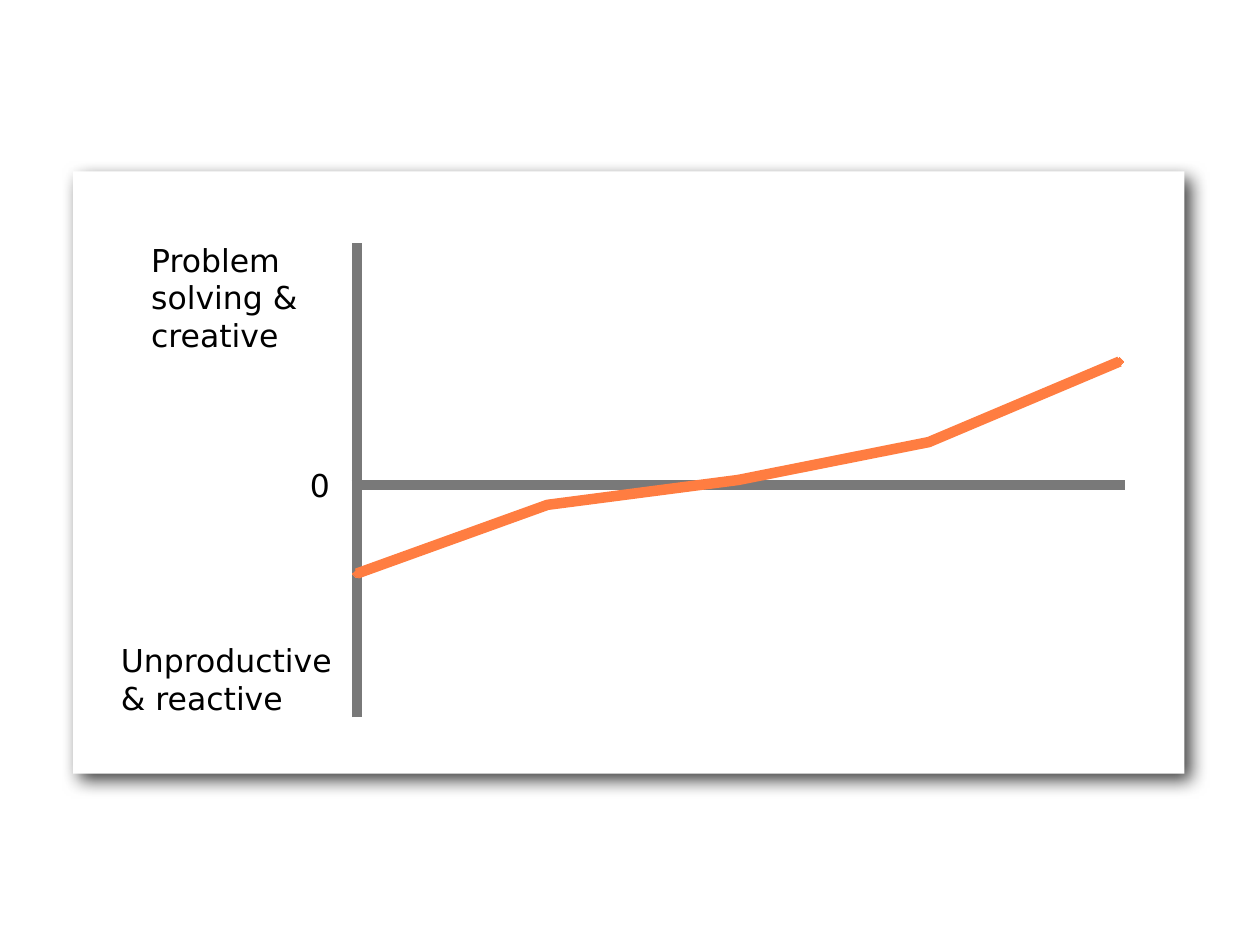
"""Build a slide charting the move from reactive to creative work."""
import lxml.etree
import pptx
import pptx.chart.data
import pptx.dml.color
import pptx.enum.chart
import pptx.enum.shapes
import pptx.enum.text
import pptx.oxml.ns
import pptx.util

Inches, Pt = pptx.util.Inches, pptx.util.Pt
qn = pptx.oxml.ns.qn

LABELS = [
    (["0"], (2.36, 3.64, 0.33, 0.42), False),
    (["Problem solving & creative"], (1.1, 1.85, 1.43, 1.03), True),
    (["Unproductive", "& reactive"], (0.86, 5.03, 2.01, 0.72), False),
]
CATS = ["1", "2", "3", "4", "5"]
VALUES = [-79, -21, 0, 32, 100]
PANEL = (0.58, 1.36, 8.82, 4.78)
GRAPH = (2.53, 1.54, 6.42, 4.37)
PLOT = {"x": 0.047, "y": 0.089, "w": 0.943, "h": 0.861}
ZERO = (2.79, 3.85, 8.93, 3.85)
THEME = {
    "font": "DejaVu Sans", "tick": "Calibri", "text": "000000", "panel": "FFFFFF",
    "axis": "797979", "curve": "FF7D41", "mark": "FFAA79",
    "label": 18, "chart": 10, "ticks": 24, "line": 6,
}


def place(box):
    """Turn a tuple of inches into lengths."""
    return [Inches(v) for v in box]


def tint(name):
    """Return a theme colour."""
    return pptx.dml.color.RGBColor.from_string(THEME[name])


def add(parent, tag, **attrs):
    """Append an XML child with attributes."""
    node = lxml.etree.SubElement(parent, qn(tag))
    for key, val in attrs.items():
        node.set(key, str(val))
    return node


def style(font, face="font", size="label"):
    """Give a font its face, size and colour."""
    font.name, font.size = THEME[face], Pt(THEME[size])
    font.color.rgb = tint("text")


def stroke(line, name):
    """Give a line its colour and width."""
    line.color.rgb = tint(name)
    line.width = Pt(THEME["line"])


def write(slide, lines, box, wrap=False, pad=0.06, indent=0.04):
    """Add a text box with one paragraph per line."""
    frame = slide.shapes.add_textbox(*place(box)).text_frame
    frame.word_wrap = wrap
    frame.auto_size = pptx.enum.text.MSO_AUTO_SIZE.SHAPE_TO_FIT_TEXT
    frame.margin_left = frame.margin_right = Inches(pad)
    frame.margin_top = frame.margin_bottom = Inches(pad)
    for i, line in enumerate(lines):
        para = frame.add_paragraph() if i else frame.paragraphs[0]
        props = para._p.get_or_add_pPr()
        props.set("marL", str(Inches(indent)))
        props.set("indent", "0")
        run = para.add_run()
        run.text = line
        style(run.font)


def draw_panel(slide):
    """Draw the white card with its soft shadow."""
    card = slide.shapes.add_shape(pptx.enum.shapes.MSO_SHAPE.RECTANGLE, *place(PANEL))
    card.fill.solid()
    card.fill.fore_color.rgb = tint("panel")
    card.line.fill.background()
    card.shadow.inherit = False
    cast = add(card._element.spPr.find(qn("a:effectLst")), "a:outerShdw",
               blurRad=Pt(10), dist=Pt(6), dir=45 * 60000, algn="tl", rotWithShape=0)
    add(add(cast, "a:srgbClr", val=THEME["text"]), "a:alpha", val=75000)


def draw_zero(slide):
    """Draw the horizontal zero line."""
    line = slide.shapes.add_connector(pptx.enum.shapes.MSO_CONNECTOR.STRAIGHT, *place(ZERO))
    stroke(line.line, "axis")
    add(line._element.spPr, "a:effectLst")


def set_plot(chart):
    """Fix the inner plot area and start the curve on the axis."""
    area = chart._chartSpace.chart.plotArea
    for old in area.findall(qn("c:layout")):
        area.remove(old)
    layout = lxml.etree.Element(qn("c:layout"))
    area.insert(0, layout)
    manual = add(layout, "c:manualLayout")
    add(manual, "c:layoutTarget", val="inner")
    for key in "xy":
        add(manual, f"c:{key}Mode", val="edge")
    for key, val in PLOT.items():
        add(manual, f"c:{key}", val=val)
    scale = chart.value_axis._element
    for old in scale.findall(qn("c:crossBetween")):
        scale.remove(old)
    cross = lxml.etree.Element(qn("c:crossBetween"))
    cross.set("val", "midCat")
    scale.find(qn("c:crosses")).addnext(cross)


def draw_chart(slide):
    """Draw the line chart with bare axes."""
    kinds = pptx.enum.chart
    data = pptx.chart.data.CategoryChartData()
    data.categories = CATS
    data.add_series("Series 1", VALUES)
    chart = slide.shapes.add_chart(kinds.XL_CHART_TYPE.LINE_MARKERS, *place(GRAPH), data).chart
    chart.has_legend = chart.has_title = False
    style(chart.font, size="chart")
    for axis in (chart.category_axis, chart.value_axis):
        axis.has_major_gridlines = False
        axis.major_tick_mark = axis.minor_tick_mark = kinds.XL_TICK_MARK.NONE
        axis.tick_label_position = kinds.XL_TICK_LABEL_POSITION.NONE
        style(axis.tick_labels.font, "tick", "ticks")
    chart.category_axis.format.line.fill.background()
    scale = chart.value_axis
    scale.minimum_scale, scale.maximum_scale, scale.major_unit = -200, 200, 200
    scale.tick_labels.number_format = "0.0"
    scale.tick_labels.number_format_is_linked = False
    stroke(scale.format.line, "axis")
    chart.plots[0].vary_by_categories = False
    curve = chart.plots[0].series[0]
    curve.smooth = False
    stroke(curve.format.line, "curve")
    curve.marker.style, curve.marker.size = kinds.XL_MARKER_STYLE.DIAMOND, 5
    curve.marker.format.fill.solid()
    curve.marker.format.fill.fore_color.rgb = tint("mark")
    curve.marker.format.line.color.rgb = tint("curve")
    set_plot(chart)


def main():
    """Build and save the slide."""
    deck = pptx.Presentation()
    deck.slide_width, deck.slide_height = Inches(10), Inches(7.5)
    slide = deck.slides.add_slide(deck.slide_layouts[6])
    draw_panel(slide)
    draw_zero(slide)
    draw_chart(slide)
    for lines, box, wrap in LABELS:
        write(slide, lines, box, wrap=wrap)
    deck.save("out.pptx")


if __name__ == "__main__":
    main()
